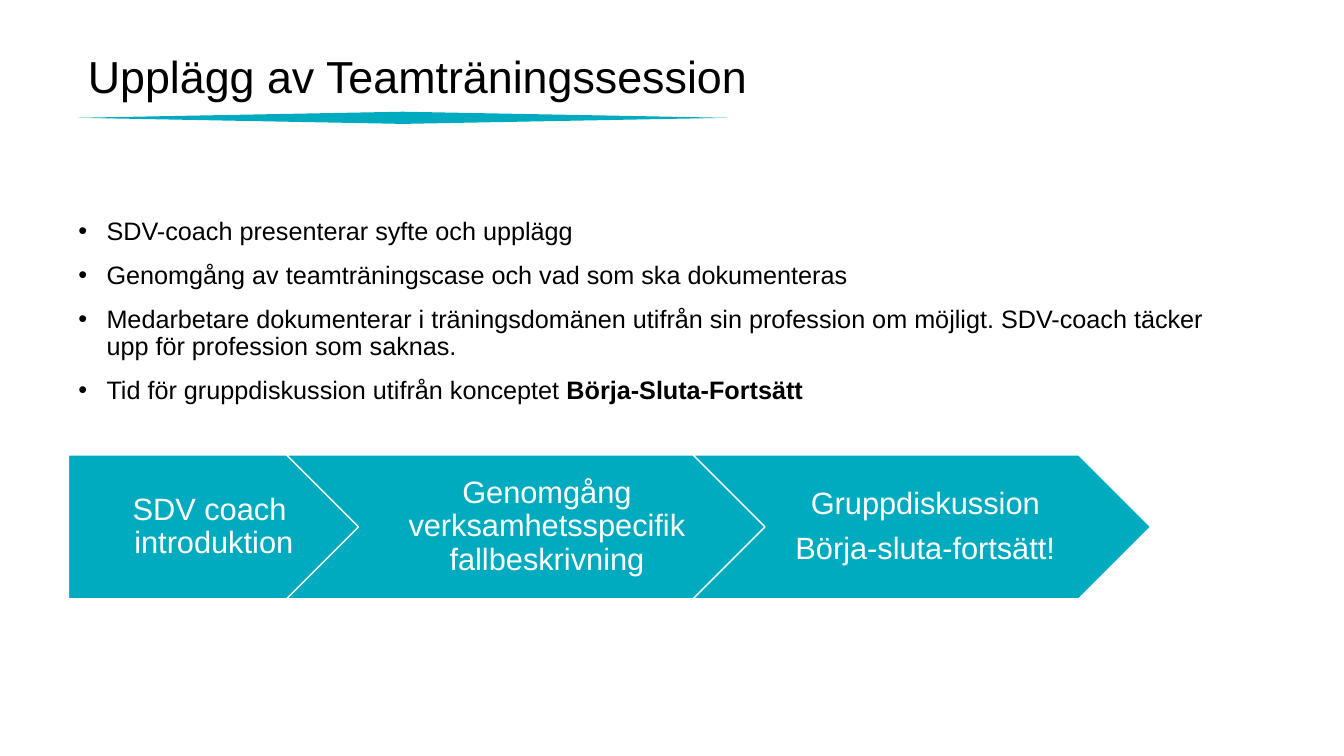
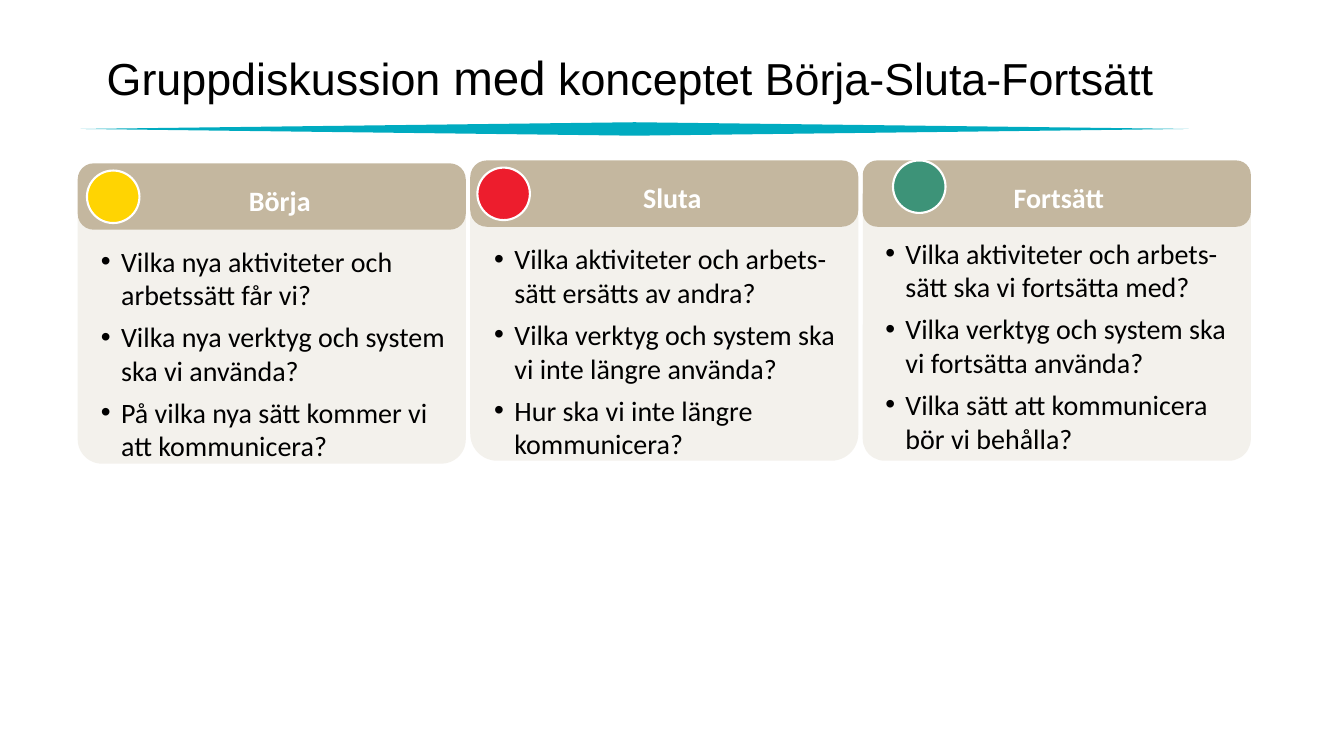
from lxml.etree import SubElement
from pptx import Presentation
from pptx.dml.color import RGBColor as RGB
from pptx.enum.shapes import MSO_SHAPE as SHAPE
from pptx.enum.text import MSO_ANCHOR as ANCHOR, MSO_AUTO_SIZE as AUTO, PP_ALIGN as ALIGN
from pptx.oxml.ns import qn
from pptx.util import Inches, Pt

COLS, ROWS = 160, 90
COLORS = dict(teal="00ABC0", sand="C4B79F", cream="F3F1EC", yellow="FFD402",
              red="ED1D2D", green="3D9378", white="FFFFFF", black="000000")


def add_bullet(p, indent):
    pPr = p._p.get_or_add_pPr()
    pPr.set("marL", str(Inches(indent)))
    pPr.set("indent", str(-Inches(indent)))
    SubElement(pPr, qn("a:buFont")).set("typeface", "Arial")
    SubElement(pPr, qn("a:buChar")).set("char", "•")


def write(tf, paragraphs, size=18, font="Arial", color="black", bold=False,
          align=ALIGN.LEFT, anchor=ANCHOR.TOP, inset=(0.1, 0.05, 0.1, 0.05),
          spacing=1.0, after=0, indent=0):
    tf.word_wrap = True
    tf.auto_size = AUTO.NONE
    tf.vertical_anchor = anchor
    tf.margin_left, tf.margin_top, tf.margin_right, tf.margin_bottom = map(Inches, inset)
    for i, runs in enumerate(paragraphs):
        p = tf.add_paragraph() if i else tf.paragraphs[0]
        if indent:
            add_bullet(p, indent)
        p.alignment, p.line_spacing = align, spacing
        p.space_before, p.space_after = Pt(0), Pt(after)
        for text, own in [(runs, {})] if isinstance(runs, str) else runs:
            for n, line in enumerate(text.split("\n")):
                if n:
                    p.add_line_break()
                r = p.add_run()
                r.text = line
                r.font.name = font
                r.font.size = Pt(own.get("size", size))
                r.font.bold = own.get("bold", bold)
                r.font.color.rgb = RGB.from_string(COLORS[color])


class Deck:
    def __init__(self):
        self.prs = Presentation()
        self.prs.slide_width, self.prs.slide_height = Inches(13.333), Inches(7.5)
        self.s = None

    def box(self, x, y, w, h):
        cw, rh = self.prs.slide_width / COLS, self.prs.slide_height / ROWS
        return int(x * cw), int(y * rh), int(w * cw), int(h * rh)

    def slide(self, title, x):
        self.s = self.prs.slides.add_slide(self.prs.slide_layouts[5])
        sp = self.s.shapes.title
        sp.left, sp.top, sp.width, sp.height = self.box(x, 5.15, 137, 5.65)
        write(sp.text_frame, [title], size=32)

    def text(self, x, y, w, h, paragraphs, **fmt):
        sp = self.s.shapes.add_textbox(*self.box(x, y, w, h))
        write(sp.text_frame, paragraphs, **fmt)

    def shape(self, kind, x, y, w, h, fill, line=0, adj=None, paragraphs=(), **fmt):
        sp = self.s.shapes.add_shape(kind, *self.box(x, y, w, h))
        sp.shadow.inherit = False
        sp.fill.solid()
        sp.fill.fore_color.rgb = RGB.from_string(COLORS[fill])
        if line:
            sp.line.color.rgb = RGB.from_string(COLORS["white"])
            sp.line.width = Pt(line)
        else:
            sp.line.fill.background()
        if adj is not None:
            sp.adjustments[0] = adj
        if paragraphs:
            write(sp.text_frame, paragraphs, **fmt)

    def underline(self, x, y, w, h):
        self.shape(SHAPE.FLOWCHART_DECISION, x, y, w, h, "teal")

    def step(self, kind, x, w, paragraphs, left):
        self.shape(kind, x, 54.15, w, 17.15, "teal", line=1, paragraphs=paragraphs,
                   size=22, color="white", align=ALIGN.CENTER, anchor=ANCHOR.MIDDLE,
                   inset=(left, 0.06, 0.03, 0.06), spacing=0.9, after=8)

    def card(self, x, y, body_y, body_h, adjs, head, left, questions):
        w = 46.2
        fmt = dict(size=20, font="Calibri", after=6)
        self.shape(SHAPE.ROUNDED_RECTANGLE, x, body_y, w, body_h, "cream", adj=adjs[0],
                   paragraphs=questions, inset=(0.16, 0.43, 0.12, 0.05), indent=0.2, **fmt)
        self.shape(SHAPE.ROUNDED_RECTANGLE, x, y, w, 7.9, "sand", adj=adjs[1],
                   paragraphs=[head], inset=(left, 0.12, 0.12, 0.05), color="white",
                   bold=True, align=ALIGN.CENTER, anchor=ANCHOR.MIDDLE, **fmt)

    def dot(self, x, y, color):
        self.shape(SHAPE.OVAL, x, y, 6.25, 6.25, color, line=1.5)


def session_slide(deck):
    deck.slide("Upplägg av Teamträningssession", 9.25)
    deck.text(8.15, 25.45, 137, 27, [
        "SDV-coach presenterar syfte och upplägg",
        "Genomgång av teamträningscase och vad som ska dokumenteras",
        "Medarbetare dokumenterar i träningsdomänen utifrån sin profession om möjligt. "
        "SDV-coach täcker upp för profession som saknas.",
        [("Tid för gruppdiskussion utifrån konceptet ", {}),
         ("Börja-Sluta-Fortsätt", {"bold": True})],
    ], spacing=0.9, after=12, indent=0.28)
    for step in [
        (SHAPE.PENTAGON, 8.15, 37.7, ["SDV coach \nintroduktion"], 0.13),
        (SHAPE.CHEVRON, 34.1, 61.2, ["Genomgång\nverksamhetsspecifik fallbeskrivning"], 0.1),
        (SHAPE.CHEVRON, 82.5, 54.5, ["Gruppdiskussion", "Börja-sluta-fortsätt!"], 0.1),
    ]:
        deck.step(*step)
    deck.underline(9.25, 13.3, 77.4, 1.45)


def discussion_slide(deck):
    deck.slide([("Gruppdiskussion ", {}), ("med", {"size": 34}),
                (" konceptet Börja-Sluta-Fortsätt", {})], 11.5)
    cards = [
        (19.45, 23.05, 32.15, (0.09, 0.24), "Börja", 0.28,
         ["Vilka nya aktiviteter och arbetssätt får vi?",
          "Vilka nya verktyg och system ska vi använda?",
          "På vilka nya sätt kommer vi att kommunicera?"], (1.1, 0.85, "yellow")),
        (19.1, 22.7, 32.15, (0.1, 0.25), "Sluta", 0.28,
         ["Vilka aktiviteter och arbets-sätt ersätts av andra?",
          "Vilka verktyg och system ska vi inte längre använda?",
          "Hur ska vi inte längre kommunicera?"], (0.85, 0.85, "red")),
        (19.1, 22.2, 32.65, (0.08, 0.22), "Fortsätt", 0.16,
         ["Vilka aktiviteter och arbets-sätt ska vi fortsätta med?",
          "Vilka verktyg och system ska vi fortsätta använda?",
          "Vilka sätt att kommunicera bör vi behålla?"], (3.6, 0, "green")),
    ]
    for i, (y, *content, (dx, dy, color)) in enumerate(cards):
        x = 9.25 + i * 46.73
        deck.card(x, y, *content)
        deck.dot(x + dx, y + dy, color)
    deck.underline(9.6, 14.55, 131.9, 1.6)


def main():
    deck = Deck()
    session_slide(deck)
    discussion_slide(deck)
    deck.prs.save("out.pptx")


if __name__ == "__main__":
    main()
